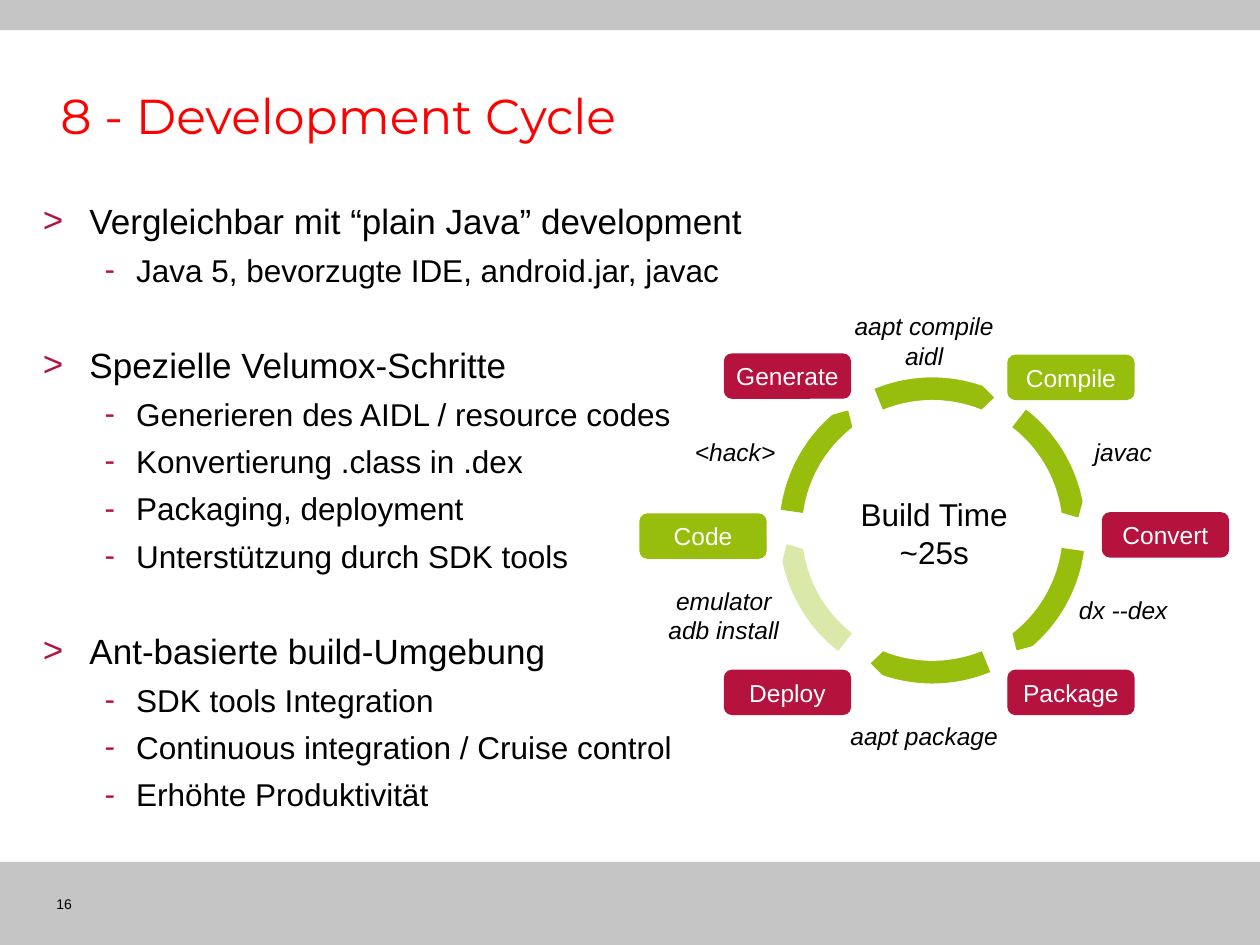
from math import cos, radians, sin

from lxml import etree
from pptx import Presentation
from pptx.dml.color import RGBColor
from pptx.enum.shapes import MSO_SHAPE
from pptx.enum.text import MSO_ANCHOR, MSO_AUTO_SIZE, PP_ALIGN
from pptx.oxml.ns import qn
from pptx.util import Inches, Pt

RECT, ROUND = MSO_SHAPE.RECTANGLE, MSO_SHAPE.ROUNDED_RECTANGLE
OVAL, DONUT = MSO_SHAPE.OVAL, MSO_SHAPE.DONUT
LEFT, CENTER = PP_ALIGN.LEFT, PP_ALIGN.CENTER
MIDDLE, FIXED = MSO_ANCHOR.MIDDLE, MSO_AUTO_SIZE.NONE

COLORS = {"gray": "C5C5C5", "title": "FF0000", "red": "B5123E",
          "green": "97BE0D", "white": "FFFFFF", "black": "000000"}

POINTS = [
    ("Vergleichbar mit “plain Java” development",
     ["Java 5, bevorzugte IDE, android.jar, javac"]),
    ("Spezielle Velumox-Schritte",
     ["Generieren des AIDL / resource codes", "Konvertierung .class in .dex",
      "Packaging, deployment", "Unterstützung durch SDK tools"]),
    ("Ant-basierte build-Umgebung",
     ["SDK tools Integration", "Continuous integration / Cruise control",
      "Erhöhte Produktivität"]),
]
# Bullet, size, indent and hanging indent in inches for each level
LEVELS = [(">", 20, 0.38, -0.37), ("-", 18, 0.75, -0.25)]

# Text, left and top within the cycle's box, colour
STEPS = [("Generate", 0.92, 0.39, "red"), ("Code", 0.25, 1.66, "green"),
         ("Package", 3.17, 2.9, "red"), ("Compile", 3.17, 0.4, "green"),
         ("Convert", 3.92, 1.65, "red"), ("Deploy", 0.92, 2.9, "red")]
# Lines, left and top within the cycle's box
TOOLS = [(["javac"], 3.17, 1), (["aapt compile", "aidl"], 1.59, 0),
         (["dx --dex"], 3.17, 2.25), (["aapt package"], 1.59, 3.25),
         (["emulator", "adb install"], 0, 2.18), (["<hack>"], 0.09, 1)]


def rgb(name):
    return RGBColor.from_string(COLORS[name])


def style(font, color="black", **format):
    font.color.rgb = rgb(color)
    for key, value in ({"name": "Arial"} | format).items():
        setattr(font, key, value)


def paint(shape, color, line=True):
    shape.shadow.inherit = False
    shape.fill.solid()
    shape.fill.fore_color.rgb = rgb(color)
    if line:
        shape.line.color.rgb = rgb(color)
        shape.line.width = Pt(0.75)
    else:
        shape.line.fill.background()
    return shape


def block(slide, kind, x, y, w, h, color, line=True):
    shape = slide.shapes.add_shape(kind, Inches(x), Inches(y), Inches(w), Inches(h))
    return paint(shape, color, line)


def write(frame, lines, align=CENTER, **format):
    for i, line in enumerate(lines):
        para = frame.add_paragraph() if i else frame.paragraphs[0]
        para.alignment = align
        run = para.add_run()
        run.text = line
        style(run.font, **format)


def label(slide, x, y, w, h, lines, **format):
    box = slide.shapes.add_textbox(Inches(x), Inches(y), Inches(w), Inches(h))
    box.text_frame.word_wrap = True
    write(box.text_frame, lines, **format)


def head(slide, x, y, w, h):
    title = slide.shapes.title
    place = {"left": x, "top": y, "width": w, "height": h}
    for key, value in place.items():
        setattr(title, key, Inches(value))
    frame = title.text_frame
    frame.auto_size = FIXED
    frame.vertical_anchor = MIDDLE
    write(frame, ["8 - Development Cycle"], LEFT, color="title",
          name="Montserrat", size=Pt(28))


def bullet(para, sign, indent, hang):
    props = para._p.get_or_add_pPr()
    props.set("marL", str(Inches(indent)))
    props.set("indent", str(Inches(hang)))
    tint = etree.SubElement(props, qn("a:buClr"))
    etree.SubElement(tint, qn("a:srgbClr"), val=COLORS["red"])
    etree.SubElement(props, qn("a:buFont"), typeface="Arial")
    etree.SubElement(props, qn("a:buChar"), char=sign)


def points(slide, x, y, w, h):
    box = slide.shapes.add_textbox(Inches(x), Inches(y), Inches(w), Inches(h))
    frame = box.text_frame
    frame.word_wrap = True
    for side in ("left", "top", "right", "bottom"):
        setattr(frame, f"margin_{side}", 0)
    rows = [(text, level) for top, subs in POINTS
            for text, level in [(top, 0)] + [(sub, 1) for sub in subs]]
    for i, (text, level) in enumerate(rows):
        para = frame.add_paragraph() if i else frame.paragraphs[0]
        sign, size, indent, hang = LEVELS[level]
        bullet(para, sign, indent, hang)
        para.level = level
        para.space_after = Pt(5.4)
        if i and not level:
            para.space_before = Pt(26)
        run = para.add_run()
        run.text = text
        style(run.font, size=Pt(size))


def arrow(slide, x, y, base, faint):
    """Curved arrow about (x, y); its head starts at the base angle."""
    arc = [base - 22.6 * i / 8 for i in range(9)]
    polar = [(0.9, a) for a in arc] + [(1.22, a) for a in reversed(arc)]
    polar += [(1.52, base), (1.16, base + 24), (0.6, base)]
    dots = [(Inches(x + r * cos(radians(a))), Inches(y + r * sin(radians(a))))
            for r, a in polar]
    path = slide.shapes.build_freeform(*dots[0])
    path.add_line_segments(dots[1:], close=True)
    shape = paint(path.convert_to_shape(), "green", not faint)
    if faint:
        tint = shape._element.spPr.find(qn("a:solidFill"))[0]
        etree.SubElement(tint, qn("a:alpha"), val="35000")


def cycle(slide, x, y):
    # Arrows, trimmed to a narrow band by a white disc and a white ring
    mid, cen = x + 2.57, y + 1.79
    for i in range(6):
        arrow(slide, mid, cen, 30.6 + 60 * i, i == 2)
    for kind, r in ((OVAL, 1.03), (DONUT, 1.62)):
        cover = block(slide, kind, mid - r, cen - r, 2 * r, 2 * r, "white")
    cover.adjustments[0] = 0.4 / (2 * r)
    # Tools along the arrows
    for lines, dx, dy in TOOLS:
        label(slide, x + dx, y + dy, 1.83, 0.33 if len(lines) == 1 else 0.57,
              lines, size=Pt(14), italic=True)
    # Steps
    for text, dx, dy, color in STEPS:
        step = block(slide, ROUND, x + dx, y + dy, 1, 0.35, color)
        frame = step.text_frame
        frame.word_wrap = False
        frame.vertical_anchor = MIDDLE
        write(frame, [text], color="white", size=Pt(14))
    # Centre
    label(slide, x + 1.67, y + 1.46, 1.83, 0.7, ["Build Time", "~25s"], size=Pt(18))


def main():
    deck = Presentation()
    deck.slide_width, deck.slide_height = Inches(10), Inches(7.5)
    slide = deck.slides.add_slide(deck.slide_layouts[5])
    # Bars at top and bottom
    for y, h in ((0, 0.24), (6.84, 0.66)):
        block(slide, RECT, 0, y, 10, h, "gray", False)
    head(slide, 0.38, 0.5, 9.29, 0.83)
    points(slide, 0.33, 1.58, 9.42, 4.68)
    cycle(slide, 4.83, 2.42)
    # Page number
    label(slide, 0.35, 7.06, 0.57, 0.26, ["16"], align=LEFT, size=Pt(8))
    deck.save("out.pptx")


if __name__ == "__main__":
    main()
